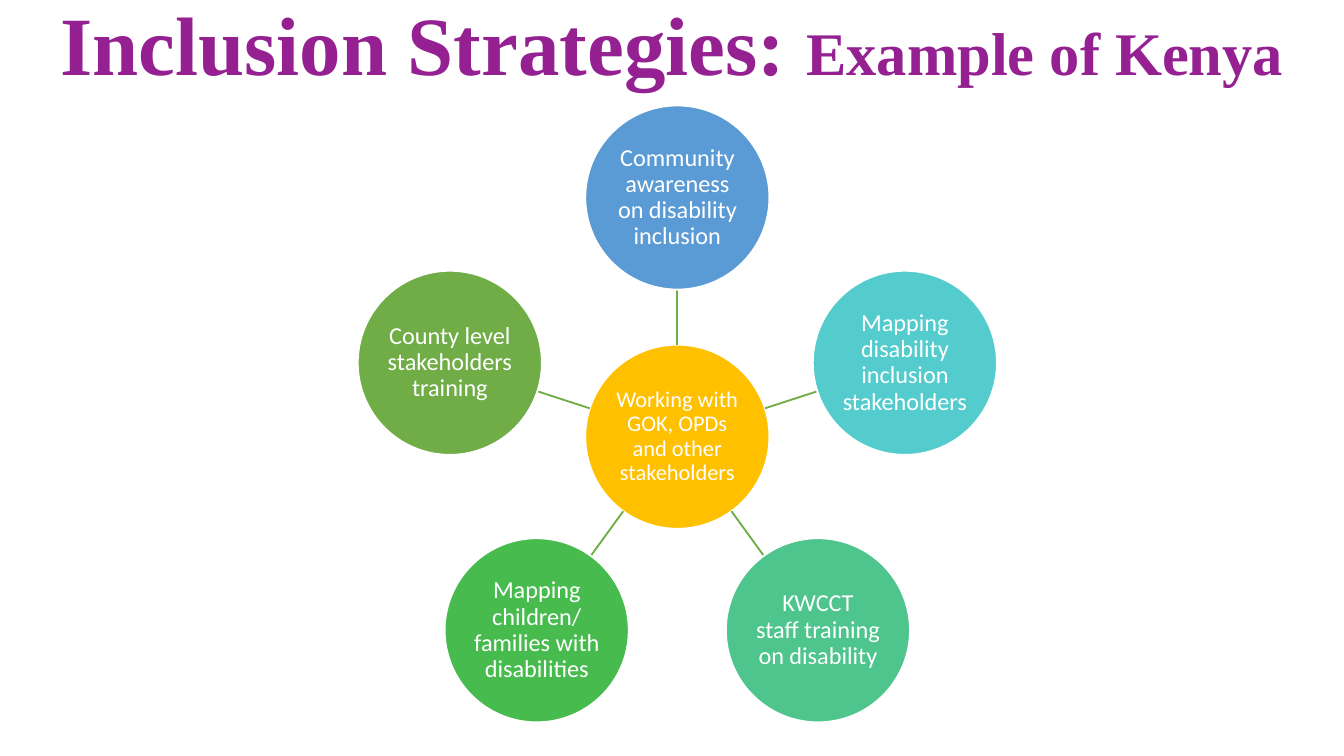
import math

from pptx import Presentation
from pptx import util as u
from pptx.dml.color import RGBColor
from pptx.enum import shapes, text
from pptx.oxml.ns import qn
from lxml import etree

WHITE = RGBColor(0xFF, 0xFF, 0xFF)
PURPLE = RGBColor(0x94, 0x20, 0x92)
AMBER = RGBColor(0xFF, 0xC0, 0x00)
BLUE = RGBColor(0x5B, 0x9B, 0xD5)
TEAL = RGBColor(0x54, 0xCC, 0xCD)
MINT = RGBColor(0x4D, 0xC5, 0x8D)
LEAF = RGBColor(0x48, 0xBB, 0x4F)
GREEN = RGBColor(0x70, 0xAD, 0x47)

# Geometry of the wheel, in inches
CENTER_X, CENTER_Y = 5.04, 3.25
DIAMETER = 1.37
RING = 1.78  # hub centre to strategy centre

HUB = "Working with GOK, OPDs and other stakeholders"
STRATEGIES = [  # clockwise from the top
    ("Community awareness on disability inclusion", BLUE),
    ("Mapping disability inclusion stakeholders", TEAL),
    ("KWCCT\vstaff training on disability", MINT),
    ("Mapping children/ families with disabilities", LEAF),
    ("County level stakeholders training", GREEN),
]


class SlideBuilder:
    title_font = "Times New Roman"
    body_font = "Calibri"
    line_spacing = 0.9

    def __init__(self, slide):
        self.s = slide

    def title(self, parts):
        sp = self.s.shapes.title
        sp.left, sp.top = u.Inches(0), u.Inches(-0.06)
        sp.width, sp.height = u.Inches(10), u.Inches(0.85)
        tf = sp.text_frame
        tf.word_wrap = True
        tf.auto_size = text.MSO_AUTO_SIZE.NONE
        tf.vertical_anchor = text.MSO_ANCHOR.MIDDLE
        p = tf.paragraphs[0]
        p.alignment = text.PP_ALIGN.CENTER
        p.line_spacing = self.line_spacing
        for words, size in parts:
            r = p.add_run()
            r.text = words
            r.font.name, r.font.size, r.font.bold = self.title_font, u.Pt(size), True
            r.font.color.rgb = PURPLE

    def circle(self, x, y, words, fill, size):
        sp = self.s.shapes.add_shape(
            shapes.MSO_SHAPE.OVAL,
            u.Inches(x - DIAMETER / 2), u.Inches(y - DIAMETER / 2),
            u.Inches(DIAMETER), u.Inches(DIAMETER))
        sp.shadow.inherit = False
        sp.fill.solid()
        sp.fill.fore_color.rgb = fill
        sp.line.color.rgb = WHITE
        sp.line.width = u.Pt(1)
        tf = sp.text_frame
        tf.word_wrap = True
        tf.vertical_anchor = text.MSO_ANCHOR.MIDDLE
        tf.margin_left = tf.margin_right = u.Inches(0.01)
        tf.margin_top = tf.margin_bottom = u.Inches(0.01)
        p = tf.paragraphs[0]
        p.text = words
        p.alignment = text.PP_ALIGN.CENTER
        p.line_spacing = self.line_spacing
        p.font.name, p.font.size = self.body_font, u.Pt(size)
        p.font.color.rgb = WHITE

    def spoke(self, start, end):
        points = [u.Inches(v) for v in (*start, *end)]
        cn = self.s.shapes.add_connector(shapes.MSO_CONNECTOR.STRAIGHT, *points)
        cn.line.color.rgb = GREEN
        cn.line.width = u.Pt(1)
        etree.SubElement(cn._element.spPr, qn("a:effectLst"))


def on_ring(angle, radius):
    return (CENTER_X + radius * math.cos(angle),
            CENTER_Y + radius * math.sin(angle))


def main():
    prs = Presentation()
    prs.slide_width = u.Inches(10)
    prs.slide_height = prs.slide_width * 9 // 16
    b = SlideBuilder(prs.slides.add_slide(prs.slide_layouts[5]))

    # Title
    b.title([("Inclusion Strategies: ", 44.4), ("Example of Kenya", 32.4)])

    # Hub
    b.circle(CENTER_X, CENTER_Y, HUB, AMBER, 12)

    # Strategies around the hub, each joined by a spoke
    for i, (words, fill) in enumerate(STRATEGIES):
        angle = math.radians(-90 + i * 360 / len(STRATEGIES))
        b.spoke(on_ring(angle, DIAMETER / 2), on_ring(angle, RING - DIAMETER / 2))
        b.circle(*on_ring(angle, RING), words, fill, 13)

    prs.save("out.pptx")


if __name__ == "__main__":
    main()
